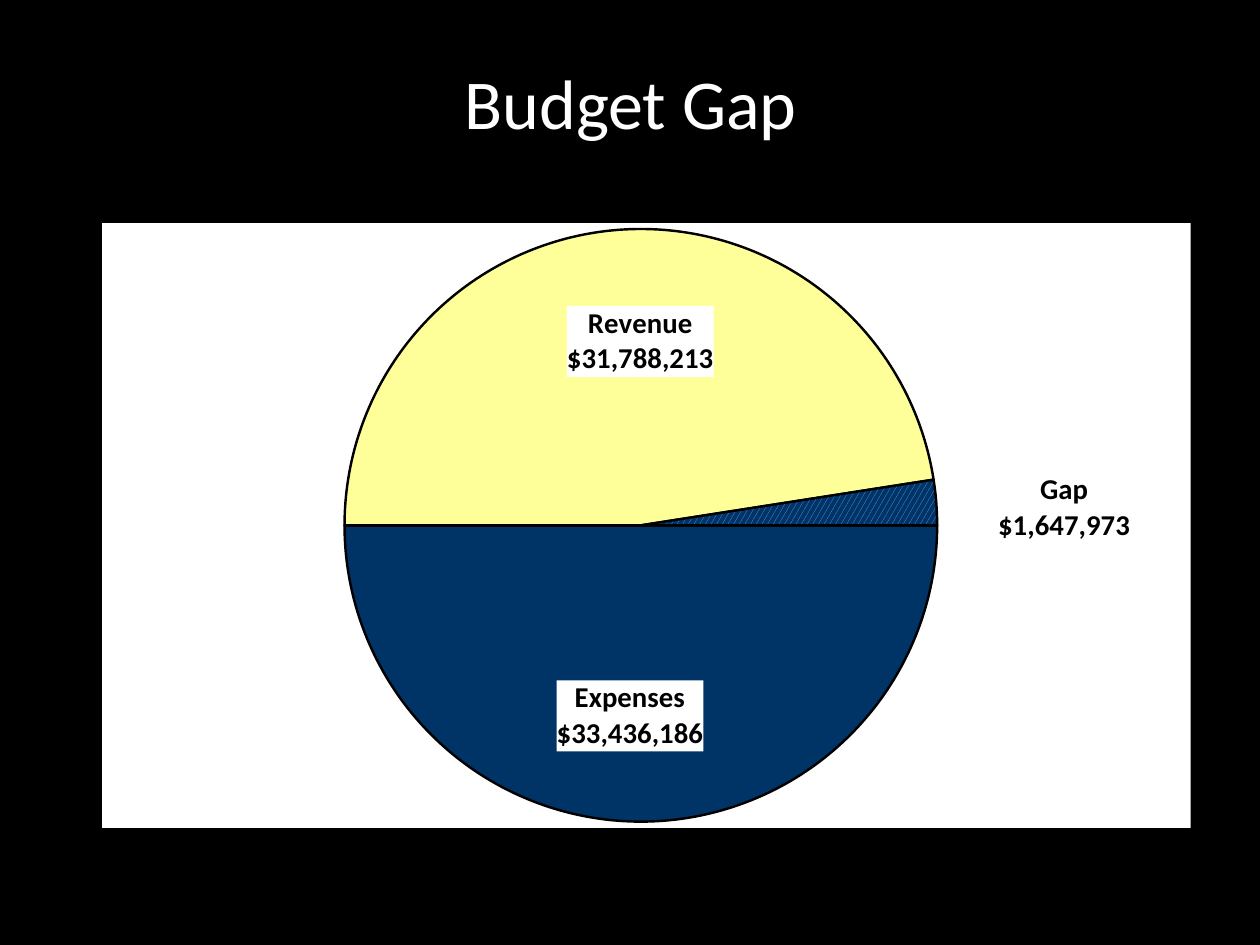
from lxml import etree
from pptx import Presentation
from pptx import oxml
from pptx.chart import data
from pptx.dml import color
from pptx.enum import chart as chart_enum, dml, text
from pptx.oxml import ns
from pptx.util import Inches, Pt


def rgb(value):
    return color.RGBColor.from_string(value)


presentation = Presentation()
presentation.slide_width, presentation.slide_height = Inches(10), Inches(7.5)
slide = presentation.slides.add_slide(presentation.slide_layouts[6])
slide.background.fill.solid()
slide.background.fill.fore_color.rgb = rgb("000000")

# Title
title = slide.shapes.add_textbox(Inches(0.98), Inches(0.42), Inches(8.05), Inches(0.75))
frame = title.text_frame
frame.word_wrap = True
frame.vertical_anchor = text.MSO_ANCHOR.BOTTOM
frame.margin_left = frame.margin_right = Inches(0.03)
frame.margin_top = frame.margin_bottom = Inches(0.03)
frame.text = "Budget Gap"
paragraph = frame.paragraphs[0]
paragraph.alignment = text.PP_ALIGN.CENTER
paragraph.font.name, paragraph.font.size = "Calibri", Pt(40)
paragraph.font.color.rgb = rgb("FFFFFF")

# Pie chart
budget = data.CategoryChartData(number_format=r"\$#,##0")
budget.categories = ["Expenses", "Revenue", "Gap"]
budget.add_series("Series 1", [33436186, 31788213, 1647973])
chart = slide.shapes.add_chart(
    chart_enum.XL_CHART_TYPE.PIE,
    Inches(0.81), Inches(1.77), Inches(8.64), Inches(4.8), budget).chart
chart.has_title = chart.has_legend = False
chart.font.name, chart.font.size, chart.font.bold = "Calibri", Pt(16.4), True
chart.font.color.rgb = rgb("000000")
plot = chart.plots[0]
plot.vary_by_categories = True
series = plot.series[0]

# Slice fills and outlines
for index, fill_color in enumerate(["003366", "FFFF99", None]):
    slice_format = series.points[index].format
    if fill_color:
        slice_format.fill.solid()
        slice_format.fill.fore_color.rgb = rgb(fill_color)
    else:
        slice_format.fill.patterned()
        slice_format.fill.pattern = dml.MSO_PATTERN.LARGE_CONFETTI
        slice_format.fill.fore_color.rgb = rgb("63AAFE")
        slice_format.fill.back_color.rgb = rgb("003366")
    slice_format.line.color.rgb = rgb("000000")
    slice_format.line.width = Pt(1.39)

# Start angle, plot area and white chart background
pie = chart.element.find(".//" + ns.qn("c:pieChart"))
angle = pie.find(ns.qn("c:firstSliceAng"))
if angle is None:
    angle = etree.SubElement(pie, ns.qn("c:firstSliceAng"))
angle.set("val", "90")

plot_area = pie.getparent()
for layout in plot_area.findall(ns.qn("c:layout")):
    plot_area.remove(layout)
plot_area.insert(0, oxml.parse_xml(
    f'<c:layout {ns.nsdecls("c")}><c:manualLayout><c:layoutTarget val="inner"/>'
    '<c:xMode val="edge"/><c:yMode val="edge"/><c:x val="0.17"/><c:y val="0.01"/>'
    '<c:w val="0.65"/><c:h val="0.98"/></c:manualLayout></c:layout>'))

WHITE_BOX = (f'<c:spPr {ns.nsdecls("c", "a")}><a:solidFill><a:srgbClr val="FFFFFF"/>'
             '</a:solidFill><a:ln><a:noFill/></a:ln></c:spPr>')
chart.element.find(ns.qn("c:chart")).addnext(oxml.parse_xml(WHITE_BOX))

# Category and value labels, nudged from their standard places
LABEL_TEXT = ('<c:txPr><a:bodyPr/><a:p><a:pPr><a:defRPr sz="1640" b="1"><a:solidFill>'
              '<a:srgbClr val="000000"/></a:solidFill><a:latin typeface="Calibri"/>'
              '</a:defRPr></a:pPr><a:endParaRPr lang="en-US"/></a:p></c:txPr>')
SHOW = ('<c:showLegendKey val="0"/><c:showVal val="1"/><c:showCatName val="1"/>'
        '<c:showSerName val="0"/><c:showPercent val="0"/><c:showBubbleSize val="0"/>'
        '<c:separator>\n</c:separator>')
LOOK = r'<c:numFmt formatCode="\$#,##0" sourceLinked="0"/>' + WHITE_BOX + LABEL_TEXT
places = [("ctr", -0.01, 0.07), ("ctr", 0.01, -0.06), ("outEnd", 0.05, 0.01)]
labels = "".join(
    f'<c:dLbl><c:idx val="{index}"/><c:layout><c:manualLayout><c:x val="{x}"/>'
    f'<c:y val="{y}"/></c:manualLayout></c:layout>{LOOK}'
    f'<c:dLblPos val="{position}"/>{SHOW}</c:dLbl>'
    for index, (position, x, y) in enumerate(places))
for old_labels in pie.findall(ns.qn("c:dLbls")):
    pie.remove(old_labels)
pie.find(".//" + ns.qn("c:cat")).addprevious(oxml.parse_xml(
    f'<c:dLbls {ns.nsdecls("c", "a")}>{labels}{LOOK}{SHOW}'
    '<c:showLeaderLines val="0"/></c:dLbls>'))

presentation.save("out.pptx")
